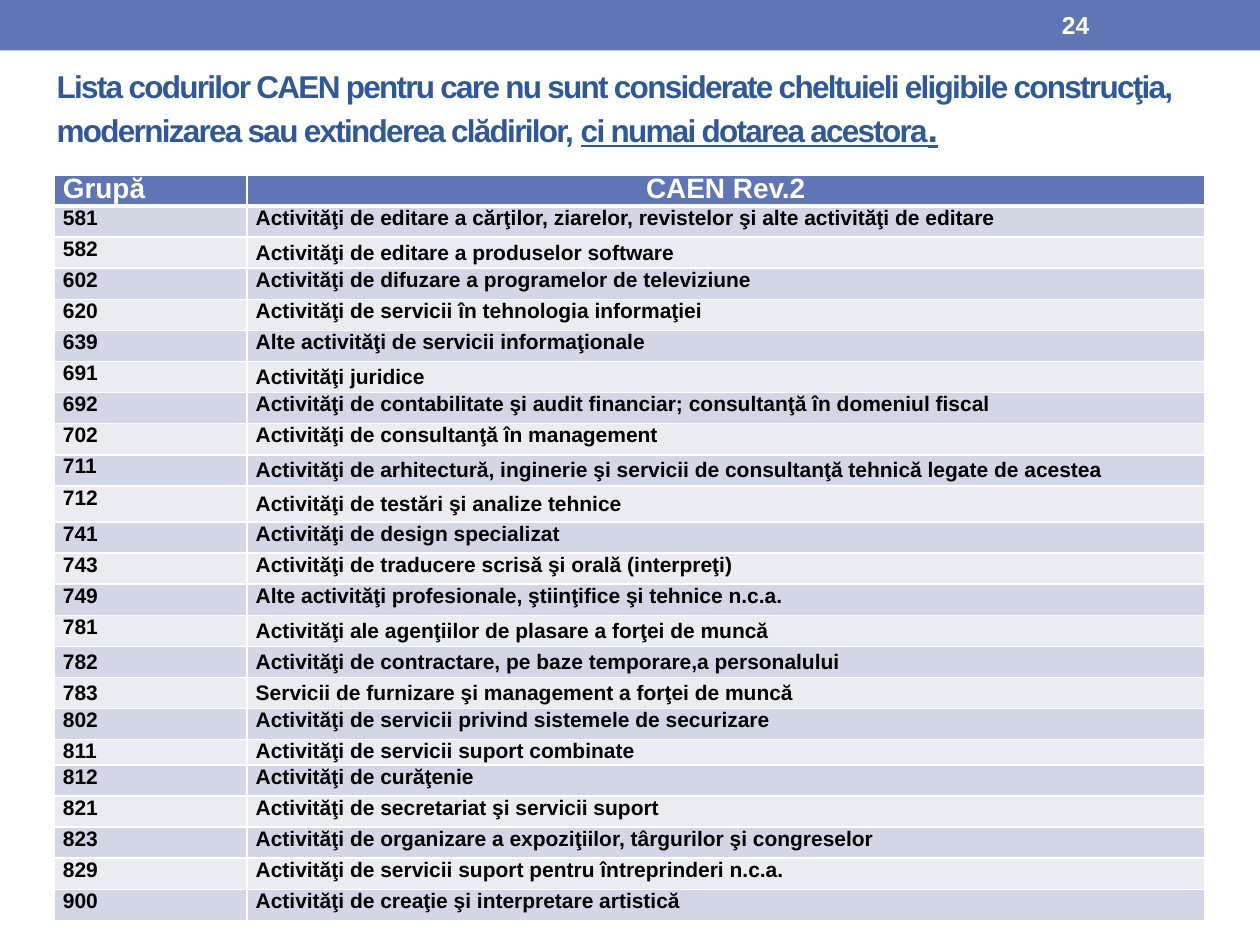
from lxml.etree import SubElement
from pptx import Presentation
from pptx.dml.color import RGBColor
from pptx.enum.shapes import MSO_SHAPE
from pptx.enum.text import MSO_ANCHOR, PP_ALIGN
from pptx.oxml.ns import qn
from pptx.util import Inches, Pt

SLIDE_WIDTH, SLIDE_HEIGHT = Inches(10), Inches(7.5)
BLUE, NAVY, WHITE, BLACK = "6076B4", "2F5897", "FFFFFF", "000000"
BANDS = ("D2D6E5", "EAECF2")
HEADINGS = ("Grupă", "CAEN Rev.2")
ACTIVITIES = [
    ("581", "Activităţi de editare a cărţilor, ziarelor, revistelor şi alte activităţi de editare"),
    ("582", "Activităţi de editare a produselor software"),
    ("602", "Activităţi de difuzare a programelor de televiziune"),
    ("620", "Activităţi de servicii în tehnologia informaţiei"),
    ("639", "Alte activităţi de servicii informaţionale"),
    ("691", "Activităţi juridice"),
    ("692", "Activităţi de contabilitate şi audit financiar; consultanţă în domeniul fiscal"),
    ("702", "Activităţi de consultanţă în management"),
    ("711", "Activităţi de arhitectură, inginerie şi servicii de consultanţă tehnică legate de acestea"),
    ("712", "Activităţi de testări şi analize tehnice"),
    ("741", "Activităţi de design specializat"),
    ("743", "Activităţi de traducere scrisă şi orală (interpreţi)"),
    ("749", "Alte activităţi profesionale, ştiinţifice şi tehnice n.c.a."),
    ("781", "Activităţi ale agenţiilor de plasare a forţei de muncă"),
    ("782", "Activităţi de contractare, pe baze temporare,a personalului"),
    ("783", "Servicii de furnizare şi management a forţei de muncă"),
    ("802", "Activităţi de servicii privind sistemele de securizare"),
    ("811", "Activităţi de servicii suport combinate"),
    ("812", "Activităţi de curăţenie"),
    ("821", "Activităţi de secretariat şi servicii suport"),
    ("823", "Activităţi de organizare a expoziţiilor, târgurilor şi congreselor"),
    ("829", "Activităţi de servicii suport pentru întreprinderi n.c.a."),
    ("900", "Activităţi de creaţie şi interpretare artistică"),
]
CENTERED_CODES = {"782", "783"}
CENTERED_NAMES = CENTERED_CODES | {"582", "691", "711", "712", "781"}
HEADING_HEIGHT, ROW_HEIGHT = Pt(16.8), Pt(17.8)
SPECIAL_HEIGHTS = {"712": Pt(20.6), "811": Pt(14)}


def color(value):
    return RGBColor.from_string(value)


def across(share):
    return round(SLIDE_WIDTH * share / 100)


def down(share):
    return round(SLIDE_HEIGHT * share / 100)


def apply_format(target, values):
    for name, value in values.items():
        setattr(target, name, value)


def add_text(paragraph, text, size, ink, **extra):
    run = paragraph.add_run()
    run.text = text
    apply_format(run.font, {"name": "Arial", "size": Pt(size), "bold": True, **extra})
    run.font.color.rgb = color(ink)
    return run


def add_band(slide):
    band = slide.shapes.add_shape(MSO_SHAPE.RECTANGLE, 0, 0, SLIDE_WIDTH, Inches(0.4))
    band.shadow.inherit = False
    band.fill.solid()
    band.fill.fore_color.rgb = color(BLUE)
    band.line.fill.background()


def fill_title(title):
    apply_format(title, {"left": across(3.5), "top": down(6.93),
                         "width": across(90.7), "height": down(14.27)})
    frame = title.text_frame
    apply_format(frame, {"word_wrap": True, "vertical_anchor": MSO_ANCHOR.BOTTOM,
                         "margin_left": Inches(0.1), "margin_right": Inches(0.05),
                         "margin_bottom": Inches(0.4)})
    heading = frame.paragraphs[0]
    apply_format(heading, {"alignment": PP_ALIGN.LEFT, "line_spacing": 1.0,
                           "space_before": Pt(0)})
    parts = [
        ("Lista codurilor CAEN pentru care nu sunt considerate cheltuieli eligibile "
         "construcţia, modernizarea sau extinderea clădirilor, ", 18, False),
        ("ci numai dotarea acestora", 18, True),
        (".", 21.6, True),
    ]
    for text, size, underlined in parts:
        run = add_text(heading, text, size, NAVY, underline=underlined)
        run.font._element.set("spc", "-100")


def add_page_number(slide):
    number = slide.shapes.add_textbox(across(83.3), down(0.27), across(11.7), down(4.8))
    apply_format(number.text_frame, {"word_wrap": True, "vertical_anchor": MSO_ANCHOR.MIDDLE})
    add_text(number.text_frame.paragraphs[0], "24", 14, WHITE)


def add_border(cell, side, points):
    border = SubElement(cell._tc.get_or_add_tcPr(), qn(f"a:{side}"), w=str(Pt(points)))
    SubElement(SubElement(border, qn("a:solidFill")), qn("a:srgbClr"), val=WHITE)


def fill_cell(cell, text, size, ink, background, centered=False, below=1):
    apply_format(cell, {"margin_left": Inches(0.07), "margin_right": Inches(0.07),
                        "margin_top": 0, "margin_bottom": 0,
                        "vertical_anchor": MSO_ANCHOR.MIDDLE if centered else MSO_ANCHOR.TOP})
    for side, points in {"lnL": 1, "lnR": 1, "lnT": 1, "lnB": below}.items():
        add_border(cell, side, points)
    cell.fill.solid()
    cell.fill.fore_color.rgb = color(background)
    paragraph = cell.text_frame.paragraphs[0]
    add_text(paragraph, text, size, ink)
    return paragraph


def add_activity_table(slide):
    heights = [HEADING_HEIGHT] + [SPECIAL_HEIGHTS.get(code, ROW_HEIGHT) for code, _ in ACTIVITIES]
    table = slide.shapes.add_table(len(heights), len(HEADINGS), across(4.3), down(18.6),
                                   across(91.3), sum(heights)).table
    for column, share in zip(table.columns, (15.3, 76)):
        column.width = across(share)
    for row, height in zip(table.rows, heights):
        row.height = height
    for column, (text, align) in enumerate(zip(HEADINGS, (PP_ALIGN.LEFT, PP_ALIGN.CENTER))):
        heading = fill_cell(table.cell(0, column), text, 16, WHITE, BLUE, below=3)
        apply_format(heading, {"alignment": align, "line_spacing": 0.9})
    for index, (code, name) in enumerate(ACTIVITIES):
        background = BANDS[index % 2]
        fill_cell(table.cell(index + 1, 0), code, 12, BLACK, background, code in CENTERED_CODES)
        fill_cell(table.cell(index + 1, 1), name, 12, BLACK, background, code in CENTERED_NAMES)


def main():
    deck = Presentation()
    apply_format(deck, {"slide_width": SLIDE_WIDTH, "slide_height": SLIDE_HEIGHT})
    slide = deck.slides.add_slide(deck.slide_layouts[5])
    add_band(slide)
    fill_title(slide.shapes.title)
    add_page_number(slide)
    add_activity_table(slide)
    deck.save("out.pptx")


if __name__ == "__main__":
    main()
